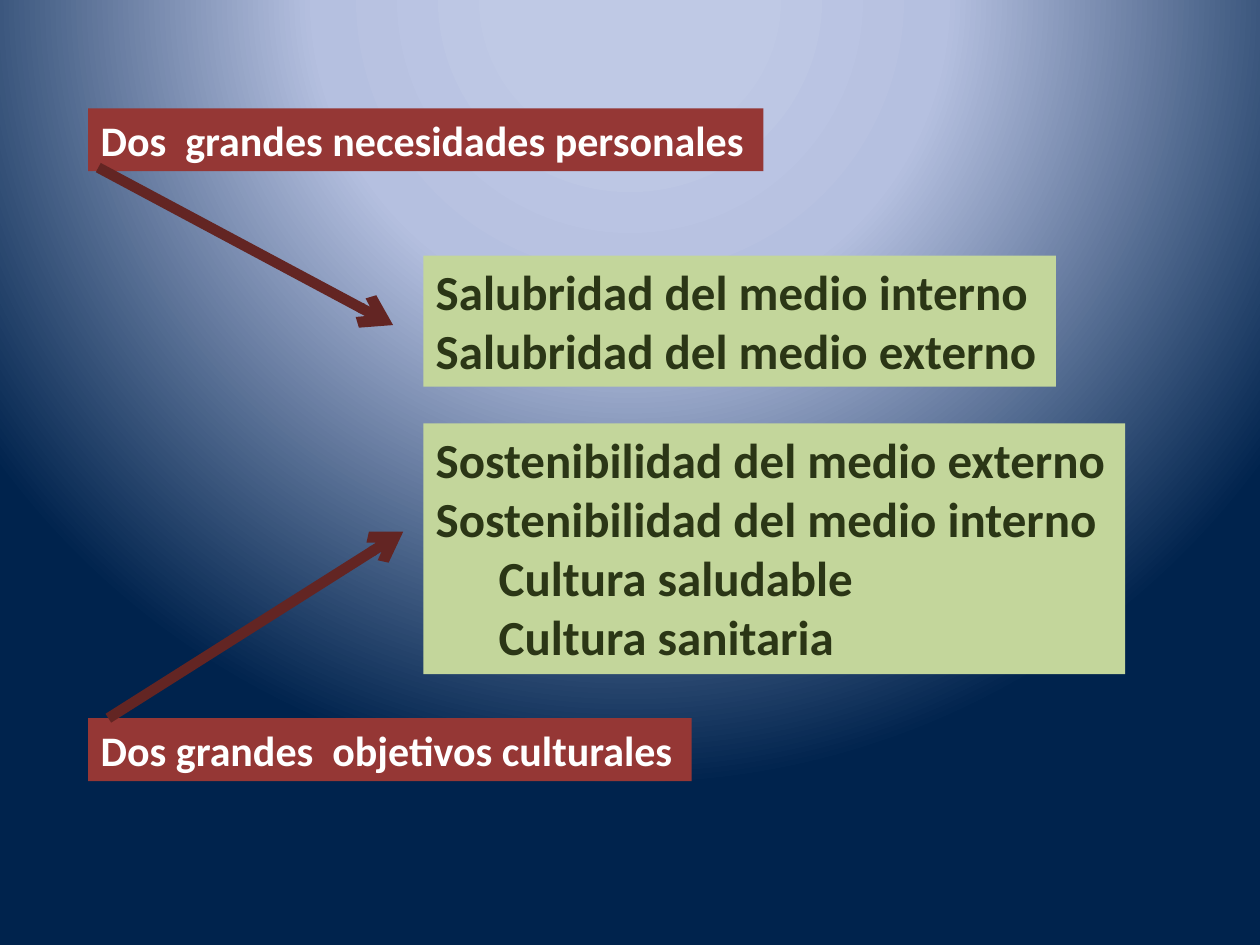
from dataclasses import dataclass

from lxml import etree
from pptx import Presentation
from pptx.dml.color import RGBColor
from pptx.enum.shapes import MSO_CONNECTOR
from pptx.enum.text import MSO_AUTO_SIZE
from pptx.oxml import parse_xml
from pptx.oxml.ns import nsdecls, qn
from pptx.slide import Slide
from pptx.util import Inches, Pt

STRAIGHT = MSO_CONNECTOR.STRAIGHT
GROW = MSO_AUTO_SIZE.SHAPE_TO_FIT_TEXT


@dataclass(frozen=True)
class Theme:
    font: str = "Calibri"
    red: str = "953735"
    white: str = "FFFFFF"
    green: str = "C3D69B"
    dark: str = "2B3616"
    arrow: str = "632523"
    glow: str = "BFC9E5"
    haze: str = "B5C0E0"
    navy: str = "00234D"
    head: int = 24
    body: int = 28
    line: int = 6


@dataclass(frozen=True)
class Panel:
    left: float
    top: float
    width: float
    height: float
    fill: str
    ink: str
    size: int
    lines: tuple[tuple[str, int], ...]  # text, indent level


@dataclass(frozen=True)
class Arrow:
    start: tuple[float, float]
    end: tuple[float, float]


THEME = Theme()
HEAD_X, BODY_X = 0.7, 3.36


def heading(top: float, width: float, text: str) -> Panel:
    return Panel(HEAD_X, top, width, 0.5, THEME.red, THEME.white,
                 THEME.head, ((text, 0),))


def detail(top: float, width: float, height: float,
           *lines: tuple[str, int]) -> Panel:
    return Panel(BODY_X, top, width, height, THEME.green, THEME.dark,
                 THEME.body, lines)


PANELS = (
    heading(5.7, 4.79, "Dos grandes  objetivos culturales"),
    detail(3.36, 5.57, 1.99,
           ("Sostenibilidad del medio externo", 0),
           ("Sostenibilidad del medio interno", 0),
           ("Cultura saludable", 1),
           ("Cultura sanitaria", 1)),
    heading(0.86, 5.36, "Dos  grandes necesidades personales"),
    detail(2.03, 5.02, 1.04,
           ("Salubridad del medio interno", 0),
           ("Salubridad del medio externo", 0)),
)
ARROWS = (
    Arrow((0.78, 1.33), (3.12, 2.58)),
    Arrow((0.86, 5.7), (3.2, 4.22)),
)


def paint_back(slide: Slide) -> None:
    """Fill the background with a round glow centred above the slide."""
    back = parse_xml(f"""
        <p:bg {nsdecls("p", "a")}><p:bgPr>
          <a:gradFill rotWithShape="1">
            <a:gsLst>
              <a:gs pos="14000"><a:srgbClr val="{THEME.glow}">
                <a:alpha val="84000"/></a:srgbClr></a:gs>
              <a:gs pos="40000"><a:srgbClr val="{THEME.haze}"/></a:gs>
              <a:gs pos="100000"><a:srgbClr val="{THEME.navy}"/></a:gs>
            </a:gsLst>
            <a:path path="circle">
              <a:fillToRect l="50000" t="-80000" r="50000" b="180000"/>
            </a:path>
          </a:gradFill>
          <a:effectLst/>
        </p:bgPr></p:bg>""")
    slide.element.cSld.insert(0, back)


def draw_panel(slide: Slide, panel: Panel) -> None:
    box = slide.shapes.add_textbox(
        Inches(panel.left), Inches(panel.top),
        Inches(panel.width), Inches(panel.height))
    box.fill.solid()
    box.fill.fore_color.rgb = RGBColor.from_string(panel.fill)
    frame = box.text_frame
    frame.word_wrap = False
    frame.auto_size = GROW
    frame.text = "\n".join(text for text, _ in panel.lines)
    for para, (_, level) in zip(frame.paragraphs, panel.lines):
        para.level = level
        font = para.font
        font.name = THEME.font
        font.size = Pt(panel.size)
        font.bold = True
        font.color.rgb = RGBColor.from_string(panel.ink)


def draw_arrow(slide: Slide, arrow: Arrow) -> None:
    ends = [Inches(value) for value in arrow.start + arrow.end]
    link = slide.shapes.add_connector(STRAIGHT, *ends)
    link.line.width = Pt(THEME.line)
    link.line.color.rgb = RGBColor.from_string(THEME.arrow)
    props = link.element.spPr
    etree.SubElement(props.find(qn("a:ln")), qn("a:tailEnd"), type="arrow")
    etree.SubElement(props, qn("a:effectLst"))


def main() -> None:
    deck = Presentation()
    deck.slide_width, deck.slide_height = Inches(10), Inches(7.5)
    slide = deck.slides.add_slide(deck.slide_layouts.get_by_name("Blank"))
    paint_back(slide)

    # Headings and their details
    for panel in PANELS:
        draw_panel(slide, panel)

    # Arrows from each heading to its details
    for arrow in ARROWS:
        draw_arrow(slide, arrow)

    deck.save("out.pptx")


if __name__ == "__main__":
    main()
